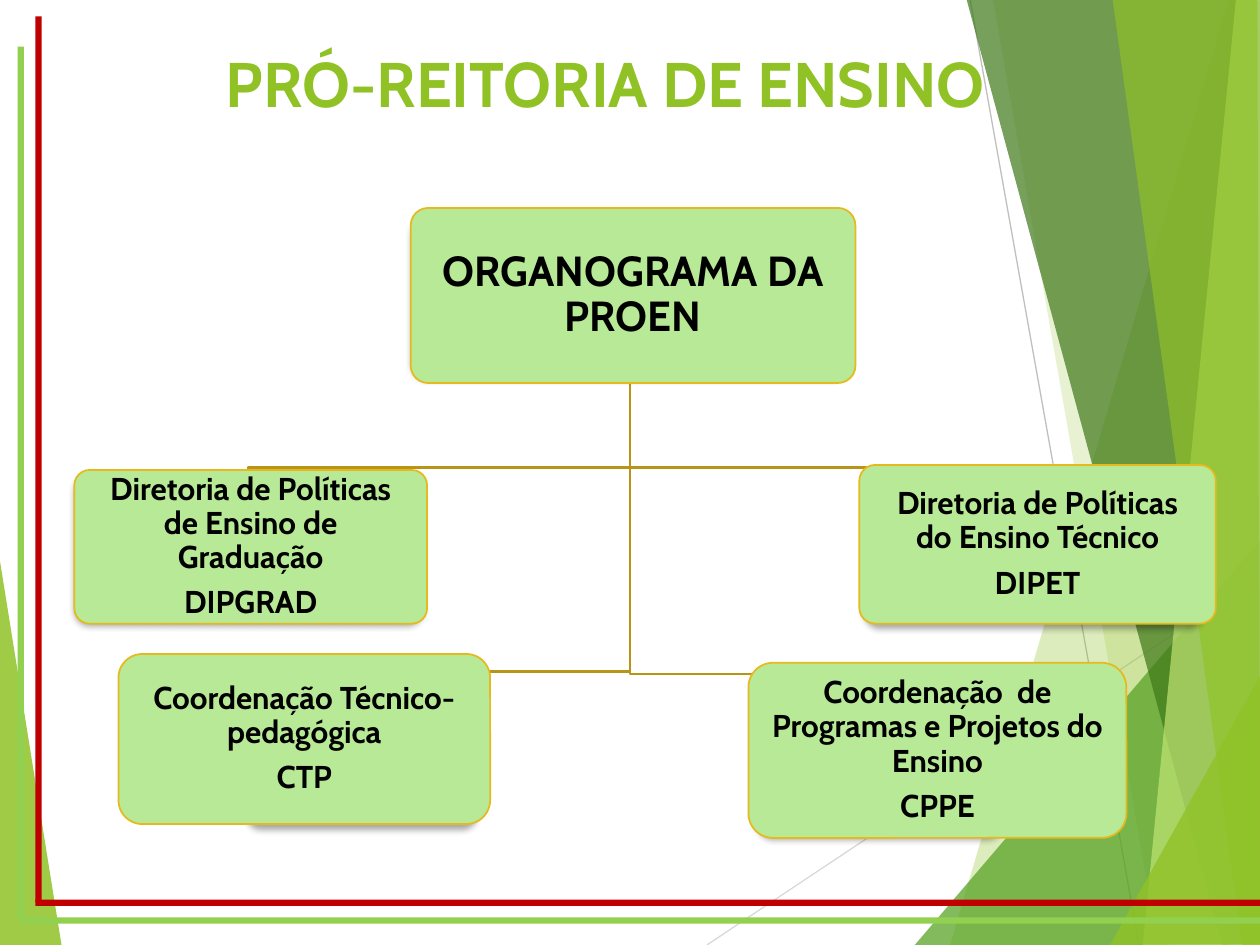
from lxml import etree
from pptx import Presentation
from pptx.dml.color import RGBColor
from pptx.enum.shapes import MSO_CONNECTOR, MSO_SHAPE
from pptx.enum.text import MSO_ANCHOR, MSO_AUTO_SIZE, PP_ALIGN
from pptx.oxml.ns import qn
from pptx.util import Pt

PX = 9144
RECT = MSO_SHAPE.RECTANGLE
ROUNDED = MSO_SHAPE.ROUNDED_RECTANGLE
STRAIGHT = MSO_CONNECTOR.STRAIGHT
TITLE_ONLY = 5
COLORS = {
    "lime": "90C226", "leaf": "54A021", "forest": "3F7819", "pale": "C0E474",
    "frame_green": "92D050", "frame_red": "C00000",
    "silver": "D9D9D9", "gray": "BFBFBF",
    "branch": "B89418", "gold": "D2A91B",
    "card": "B7E996", "card_edge": "E6B91E", "text": "000000",
}


def rgb(name):
    return RGBColor.from_string(COLORS[name])


def paint(shape, fill=None, line=None, width=1):
    shape.shadow.inherit = False
    if fill:
        shape.fill.solid()
        shape.fill.fore_color.rgb = rgb(fill)
    else:
        shape.fill.background()
    if line:
        shape.line.color.rgb = rgb(line)
        shape.line.width = Pt(width)
    else:
        shape.line.fill.background()


prs = Presentation()
prs.slide_width, prs.slide_height = 1000 * PX, 750 * PX
slide = prs.slides.add_slide(prs.slide_layouts[TITLE_ONLY])
shapes = slide.shapes

rays = [
    ((561, 750), (1001, 457), "silver"),
    ((770, 0), (904, 750), "gray"),
]
facets = [
    ("lime", 85, [(-1, 439), (49, 751), (-1, 750)]),
    ("lime", 30, [(975, 0), (754, 750), (1002, 751), (1001, 1)]),
    ("lime", 20, [(788, -1), (919, 750), (1001, 750), (1001, -1)]),
    ("leaf", 72, [(726, 750), (1000, 429), (1001, 750)]),
    ("forest", 70, [(767, -1), (970, 750), (1001, 749), (1001, -1)]),
    ("pale", 70, [(981, -1), (907, 750), (1001, 750), (1000, -1)]),
    ("lime", 65, [(883, -1), (986, 750), (1000, 750), (998, -1)]),
    ("lime", 80, [(881, 750), (1001, 535), (1001, 749)]),
]
for start, end, color in rays:
    ray = shapes.add_connector(STRAIGHT, *[n * PX for n in start + end])
    ray.line.color.rgb = rgb(color)
    ray.line.width = Pt(0.75)
    etree.SubElement(ray.element.spPr, qn("a:effectLst"))

for color, opacity, corners in facets:
    builder = shapes.build_freeform(*corners[0], scale=PX)
    builder.add_line_segments(corners[1:], close=True)
    facet = builder.convert_to_shape()
    paint(facet, color)
    tint = facet.element.spPr.find(qn("a:solidFill"))[0]
    etree.SubElement(tint, qn("a:alpha"), val=str(opacity * 1000))

frame_bars = [
    (14, 37, 5, 692, "frame_green"),
    (28, 13, 5, 703, "frame_red"),
    (28, 714, 972, 5, "frame_red"),
    (16, 728, 984, 5, "frame_green"),
]
for *box, color in frame_bars:
    paint(shapes.add_shape(RECT, *[n * PX for n in box]), color)

title = shapes.title
shapes.element.append(title.element)
title_box = {"left": 169, "top": 30, "width": 781, "height": 125}
for side, length in title_box.items():
    setattr(title, side, length * PX)
heading = title.text_frame
heading.text = "PRÓ-REITORIA DE ENSINO"
heading.vertical_anchor = MSO_ANCHOR.TOP
heading.auto_size = MSO_AUTO_SIZE.NONE
heading.paragraphs[0].alignment = PP_ALIGN.LEFT
heading_font = heading.paragraphs[0].runs[0].font
for key, value in {"name": "Cabin", "size": Pt(36), "bold": True}.items():
    setattr(heading_font, key, value)
heading_font.color.rgb = rgb("lime")

trunk_x, trunk_top = 500, 298
branches = [(821, 371, 374), (699, 535, 539), (287, 533, 537), (197, 371, 374)]
for end_x, bend_y, end_y in branches:
    builder = shapes.build_freeform(trunk_x, trunk_top, scale=PX)
    builder.add_line_segments(
        [(trunk_x, bend_y), (end_x, bend_y), (end_x, end_y)], close=False)
    paint(builder.convert_to_shape(), line="branch", width=1.5)

cards = [
    ((327, 170, 346, 127), "gold", (326, 165, 353, 139), 24, 14, 0.1,
     ["ORGANOGRAMA DA PROEN"]),
    ((59, 374, 276, 118), "forest", (59, 373, 280, 122), 18, 11, 0.1,
     ["Diretoria de Políticas de Ensino de Graduação", "DIPGRAD"]),
    ((196, 537, 182, 117), "gold", (94, 519, 295, 135), 18, 11, 0.14,
     ["Coordenação Técnico-pedagógica", "CTP"]),
    ((601, 538, 195, 124), "gold", (594, 526, 300, 139), 18, 12, 0.14,
     ["Coordenação  de Programas e Projetos do Ensino", "CPPE"]),
    ((686, 374, 269, 121), "gold", (682, 369, 283, 126), 18, 11, 0.1,
     ["Diretoria de Políticas do Ensino Técnico", "DIPET"]),
]
for back_box, back_color, card_box, size, inset, corner, lines in cards:
    backing = shapes.add_shape(ROUNDED, *[n * PX for n in back_box])
    backing.adjustments[0] = 0.1
    paint(backing, back_color)
    effects = backing.element.spPr.find(qn("a:effectLst"))
    shade = etree.SubElement(effects, qn("a:outerShdw"), blurRad=str(Pt(4)),
                             dist=str(Pt(3)), dir="5400000", rotWithShape="0")
    black = etree.SubElement(shade, qn("a:srgbClr"), val=COLORS["text"])
    etree.SubElement(black, qn("a:alpha"), val="35000")

    card = shapes.add_shape(ROUNDED, *[n * PX for n in card_box])
    card.adjustments[0] = corner
    paint(card, "card", "card_edge")
    frame = card.text_frame
    frame.word_wrap = True
    frame.vertical_anchor = MSO_ANCHOR.MIDDLE
    for side in ("left", "top", "right", "bottom"):
        setattr(frame, "margin_" + side, inset * PX)
    frame.text = "\n".join(lines)
    paragraph_format = {"alignment": PP_ALIGN.CENTER, "line_spacing": 0.9,
                        "space_after": Pt(size * 0.35)}
    for paragraph in frame.paragraphs:
        for key, value in paragraph_format.items():
            setattr(paragraph, key, value)
        font = paragraph.runs[0].font
        for key, value in {"name": "Cabin", "size": Pt(size), "bold": True}.items():
            setattr(font, key, value)
        font.color.rgb = rgb("text")

prs.save("out.pptx")
